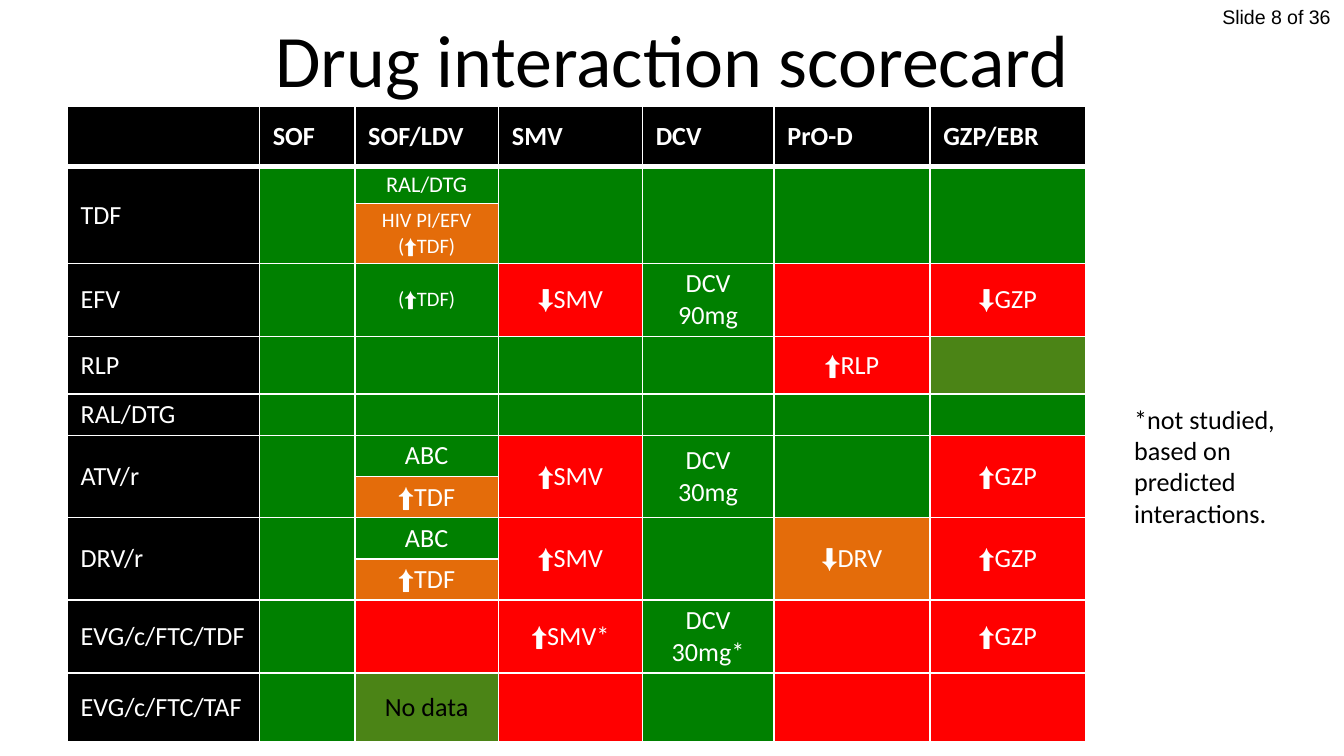
from dataclasses import dataclass
from itertools import groupby

from lxml import etree
from pptx import Presentation
from pptx.dml.color import RGBColor
from pptx.enum import text as t
from pptx.oxml import ns
from pptx.util import Inches, Pt

BLACK = RGBColor(0x00, 0x00, 0x00)
WHITE = RGBColor(0xFF, 0xFF, 0xFF)
GREEN = RGBColor(0x00, 0x80, 0x00)
RED = RGBColor(0xFF, 0x00, 0x00)
AMBER = RGBColor(0xE4, 0x6C, 0x0A)
OLIVE = RGBColor(0x4B, 0x84, 0x16)

LEFT, MID, RIGHT = t.PP_ALIGN.LEFT, t.PP_ALIGN.CENTER, t.PP_ALIGN.RIGHT
ARROWS = "⬆⬇"
COLS = [1.43, 0.71, 1.07, 1.07, 0.98, 1.16, 1.16]
ROWS = [0.45, 0.26, 0.42, 0.51, 0.43] + [0.29] * 5 + [0.51] * 2
HEADS = ["", "SOF", "SOF/LDV", "SMV", "DCV", "PrO-D", "GZP/EBR"]


@dataclass(frozen=True)
class Score:
    fill: RGBColor
    text: str = ""
    size: float = 14
    ink: RGBColor = WHITE


@dataclass(frozen=True)
class Drug:
    name: str
    row: int
    cells: list[Score]
    low: Score | None = None  # lower half of a split SOF/LDV cell


@dataclass(frozen=True)
class Label:
    text: str
    box: tuple[float, float, float, float]
    size: float
    face: str = "Calibri"
    align: t.PP_ALIGN = LEFT
    anchor: t.MSO_ANCHOR = t.MSO_ANCHOR.TOP


OK, BAD = Score(GREEN), Score(RED)
ABC = Score(GREEN, "ABC")
MORE_TDF = Score(AMBER, "⬆TDF")
MORE_SMV = Score(RED, "⬆SMV")
MORE_GZP = Score(RED, "⬆GZP")

DRUGS = [
    Drug("TDF", 1, [OK, Score(GREEN, "RAL/DTG", 12), OK, OK, OK, OK],
         Score(AMBER, "HIV PI/EFV\n(⬆TDF)", 11)),
    Drug("EFV", 3, [OK, Score(GREEN, "(⬆TDF)", 11), Score(RED, "⬇SMV"),
                    Score(GREEN, "DCV 90mg"), BAD, Score(RED, "⬇GZP")]),
    Drug("RLP", 4, [OK, OK, OK, OK, Score(RED, "⬆RLP"), Score(OLIVE)]),
    Drug("RAL/DTG", 5, [OK] * 6),
    Drug("ATV/r", 6, [OK, ABC, MORE_SMV, Score(GREEN, "DCV 30mg"), OK, MORE_GZP],
         MORE_TDF),
    Drug("DRV/r", 8, [OK, ABC, MORE_SMV, OK, Score(AMBER, "⬇DRV"), MORE_GZP],
         MORE_TDF),
    Drug("EVG/c/FTC/TDF", 10, [OK, BAD, Score(RED, "⬆SMV*"),
                               Score(GREEN, "DCV 30mg*"), BAD, MORE_GZP]),
    Drug("EVG/c/FTC/TAF", 11, [OK, Score(OLIVE, "No data", ink=BLACK),
                               BAD, OK, BAD, BAD]),
]

LABELS = [
    Label("Slide 8 of 36", (8.33, -0.01, 1.67, 0.28), 10.5, "Arial", RIGHT),
    Label("*not studied, based on predicted interactions.",
          (8.34, 2.95, 1.47, 1.04), 14),
    Label("Drug interaction scorecard", (0.5, 0.07, 9, 0.72), 39.6,
          align=MID, anchor=t.MSO_ANCHOR.MIDDLE),
]


def style(font, face: str, size: float, ink: RGBColor, bold: bool = False) -> None:
    font.name, font.size, font.bold = face, Pt(size), bold
    font.color.rgb = ink


def edge(cell, head: bool, under: bool) -> None:
    """Draw white cell borders, thick between header and body."""
    props = cell._tc.get_or_add_tcPr()
    for side in "LRTB":
        thick = (head and side == "B") or (under and side == "T")
        line = etree.SubElement(props, ns.qn(f"a:ln{side}"),
                                w=str(Pt(3 if thick else 1)))
        fill = etree.SubElement(line, ns.qn("a:solidFill"))
        etree.SubElement(fill, ns.qn("a:srgbClr"), val=str(WHITE))


def paint(cell, score: Score, align: t.PP_ALIGN = MID, bold: bool = False) -> None:
    cell.fill.solid()
    cell.fill.fore_color.rgb = score.fill
    cell.vertical_anchor = t.MSO_ANCHOR.MIDDLE
    if not score.text:
        return
    cell.text_frame.text = score.text
    for para in cell.text_frame.paragraphs:
        para.alignment = align
        line = para.text
        para.clear()
        # Arrows take a font of their own
        for arrow, part in groupby(line, lambda sign: sign in ARROWS):
            run = para.add_run()
            run.text = "".join(part)
            style(run.font, "Arial" if arrow else "Calibri",
                  score.size, score.ink, bold)


def add_grid(slide) -> None:
    grid = slide.shapes.add_table(len(ROWS), len(COLS), Inches(0.5), Inches(0.79),
                                  Inches(sum(COLS)), Inches(sum(ROWS))).table
    for col, width in zip(grid.columns, COLS):
        col.width = Inches(width)
    for num, (row, height) in enumerate(zip(grid.rows, ROWS)):
        row.height = Inches(height)
        for cell in row.cells:
            cell.margin_left = cell.margin_right = Inches(0.1)
            cell.margin_top = cell.margin_bottom = Inches(0.07) // 2
            edge(cell, num == 0, num == 1)
            # Small empty text keeps low rows from growing
            para = cell.text_frame.paragraphs[0]._p
            etree.SubElement(para, ns.qn("a:endParaRPr"), sz="1100")

    # Header row
    for col, head in enumerate(HEADS):
        paint(grid.cell(0, col), Score(BLACK, head), LEFT, True)

    # One row, or a split pair of rows, for each drug
    for drug in DRUGS:
        for col, score in enumerate([Score(BLACK, drug.name), *drug.cells]):
            cell = grid.cell(drug.row, col)
            paint(cell, score, MID if col else LEFT)
            if drug.low:
                below = grid.cell(drug.row + 1, col)
                if col == 2:
                    paint(below, drug.low)
                else:
                    cell.merge(below)


def add_label(slide, label: Label) -> None:
    box = slide.shapes.add_textbox(*map(Inches, label.box))
    frame = box.text_frame
    frame.word_wrap = True
    frame.vertical_anchor = label.anchor
    frame.text = label.text
    para = frame.paragraphs[0]
    para.alignment = label.align
    style(para.runs[0].font, label.face, label.size, BLACK)


def main() -> None:
    deck = Presentation()
    # Widescreen, 16 to 9
    deck.slide_width = Inches(10)
    deck.slide_height = Inches(10) * 9 // 16
    slide = deck.slides.add_slide(deck.slide_layouts[6])
    add_grid(slide)
    for label in LABELS:
        add_label(slide, label)
    deck.save("out.pptx")


if __name__ == "__main__":
    main()
